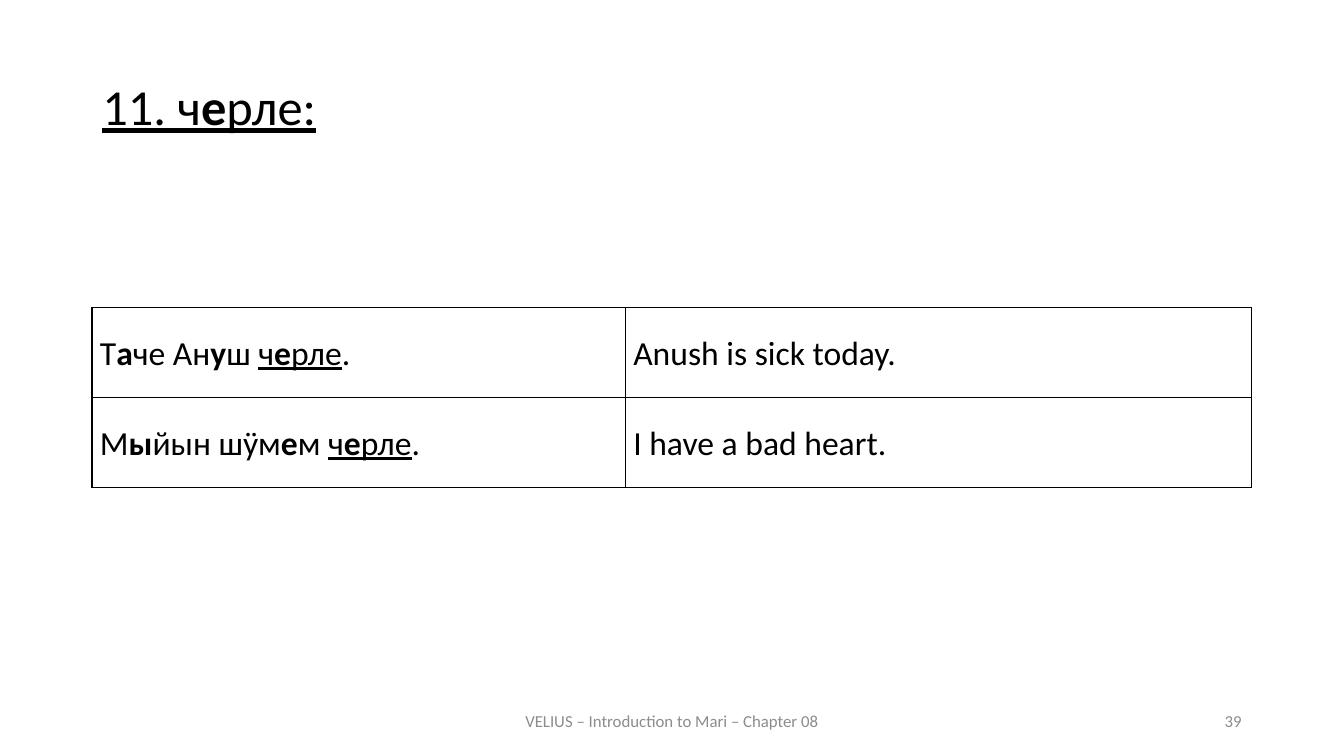
import pptx
import pptx.util
import pptx.dml.color
import pptx.enum.text
import pptx.oxml
import pptx.oxml.ns

Pt = pptx.util.Pt
RGB = pptx.dml.color.RGBColor.from_string
ALIGN = pptx.enum.text.PP_ALIGN
ANCHOR = pptx.enum.text.MSO_ANCHOR

THEME = {
    "font": "Calibri",
    "ink": "000000",
    "muted": "8C8C8C",
    "heading": 36,
    "example": 24,
    "footer": 12,
}


def write(paragraph, marked, size, color, **layout):
    """Fill a paragraph; * toggles bold (stress) and _ toggles underline."""
    for name, value in layout.items():
        setattr(paragraph, name, value)
    stressed = underlined = False
    for i, section in enumerate(marked.split("_")):
        underlined = i % 2 == 1
        for j, piece in enumerate(section.split("*")):
            stressed = j % 2 == 1
            if not piece:
                continue
            run = paragraph.add_run()
            run.text = piece
            look = {"name": THEME["font"], "size": Pt(THEME[size]),
                    "bold": stressed, "underline": underlined}
            for name, value in look.items():
                setattr(run.font, name, value)
            run.font.color.rgb = RGB(THEME[color])


def add_border(cell, side, width):
    """Draw one solid edge of a table cell."""
    cell._tc.get_or_add_tcPr().append(pptx.oxml.parse_xml(
        f'<a:{side} {pptx.oxml.ns.nsdecls("a")} w="{Pt(width)}"><a:solidFill>'
        f'<a:srgbClr val="{THEME["ink"]}"/></a:solidFill></a:{side}>'))


deck = pptx.Presentation()
deck.slide_width, deck.slide_height = Pt(960), Pt(540)
slide = deck.slides.add_slide(deck.slide_layouts[6])

# Heading and footer
texts = [
    ((66, 54.75, 828, 71.25), "_11. ч*е*рле:_", "heading", "ink", ANCHOR.TOP,
     {"alignment": ALIGN.JUSTIFY, "line_spacing": 0.9}),
    ((318, 500.5, 324, 28.75), "VELIUS – Introduction to Mari – Chapter 08",
     "footer", "muted", ANCHOR.MIDDLE, {"alignment": ALIGN.CENTER}),
    ((678, 500.5, 216, 28.75), "39",
     "footer", "muted", ANCHOR.MIDDLE, {"alignment": ALIGN.RIGHT}),
]
for place, wording, size, color, anchor, layout in texts:
    frame = slide.shapes.add_textbox(*map(Pt, place)).text_frame
    frame.word_wrap = True
    frame.vertical_anchor = anchor
    write(frame.paragraphs[0], wording, size, color, **layout)

# Example sentences with translations
examples = [
    ("Т*а*че Ан*у*ш _ч*е*рле_.", "Anush is sick today."),
    ("М*ы*йын шӱм*е*м _ч*е*рле_.", "I have a bad heart."),
]
column_widths = (381, 447)
row_height = 64.4
sentences = slide.shapes.add_table(
    len(examples), len(column_widths), Pt(66), Pt(219.6),
    Pt(sum(column_widths)), Pt(row_height * len(examples))).table
sentences.first_row = sentences.horz_banding = False
for column, width in zip(sentences.columns, column_widths):
    column.width = Pt(width)

cell_format = {"margin_left": Pt(5.4), "margin_right": Pt(5.4),
               "margin_top": 0, "margin_bottom": 0,
               "vertical_anchor": ANCHOR.MIDDLE}
column_borders = [
    {"lnL": 1.5, "lnR": 1, "lnT": 1, "lnB": 1},
    {"lnL": 1, "lnR": 1.5, "lnT": 1, "lnB": 1},
]
for r, pair in enumerate(examples):
    sentences.rows[r].height = Pt(row_height)
    for c, wording in enumerate(pair):
        cell = sentences.cell(r, c)
        for name, value in cell_format.items():
            setattr(cell, name, value)
        for side, width in column_borders[c].items():
            add_border(cell, side, width)
        cell.fill.background()
        write(cell.text_frame.paragraphs[0], wording, "example", "ink",
              alignment=ALIGN.JUSTIFY, line_spacing=1.07)

deck.save("out.pptx")
